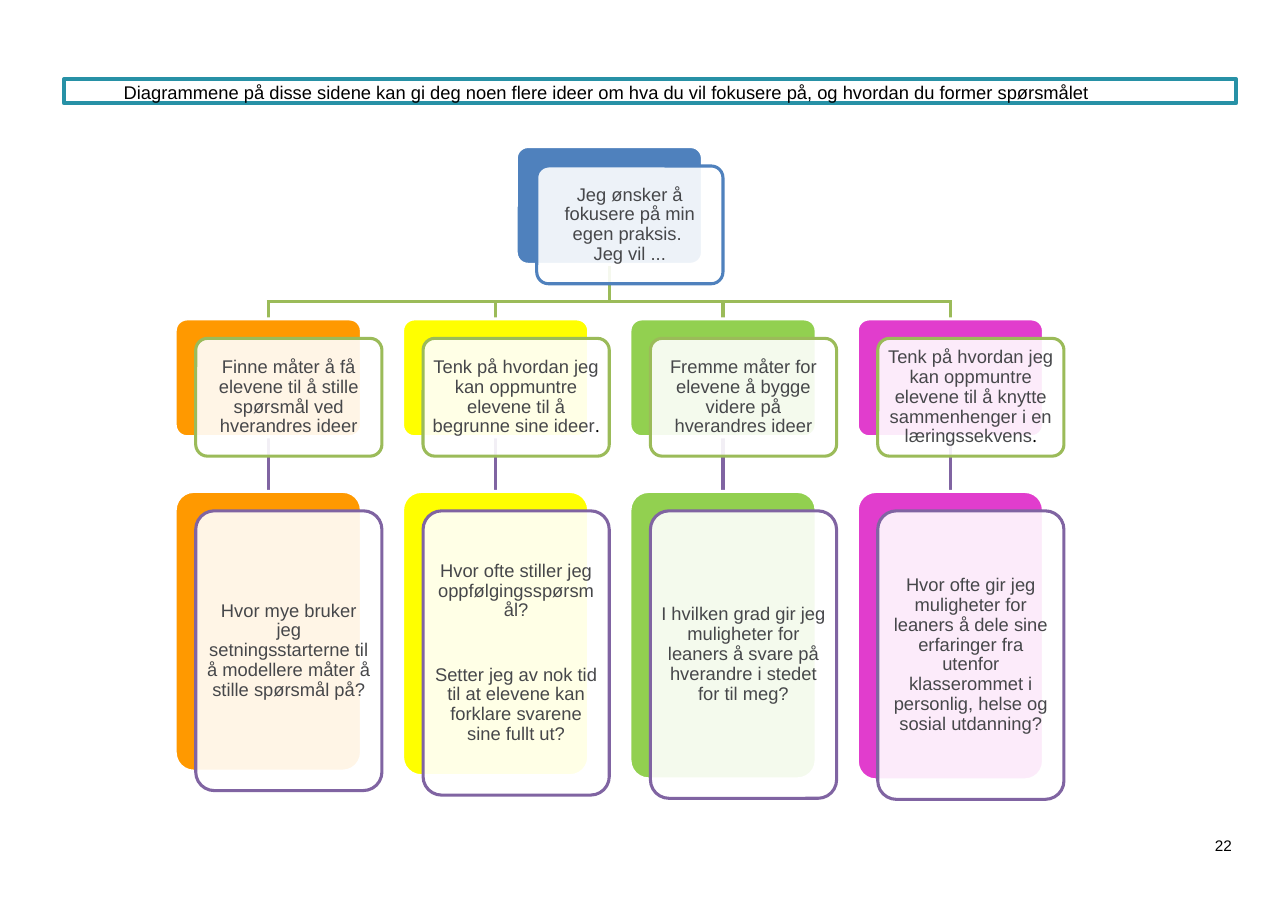
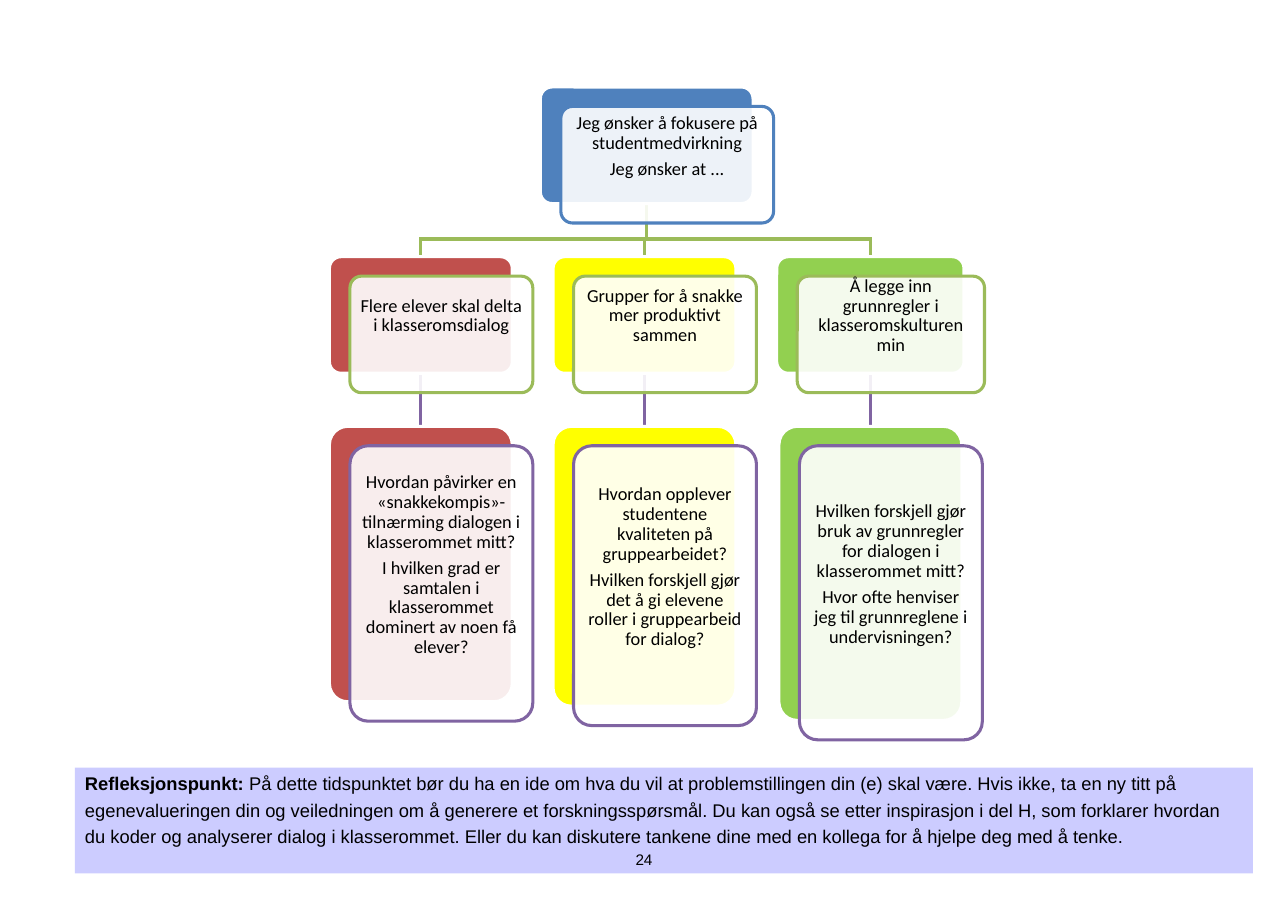
from dataclasses import dataclass

from lxml import etree
from pptx import Presentation
from pptx.dml.color import RGBColor
from pptx.enum.shapes import MSO_CONNECTOR, MSO_SHAPE
from pptx.enum.text import MSO_ANCHOR, MSO_AUTO_SIZE, PP_ALIGN
from pptx.oxml.ns import qn
from pptx.util import Pt

RECT, ROUND = MSO_SHAPE.RECTANGLE, MSO_SHAPE.ROUNDED_RECTANGLE
STRAIGHT = MSO_CONNECTOR.STRAIGHT
TOP, MIDDLE = MSO_ANCHOR.TOP, MSO_ANCHOR.MIDDLE
LEFT, CENTER = PP_ALIGN.LEFT, PP_ALIGN.CENTER
TITLE_ONLY, BLANK = 5, 6


@dataclass(frozen=True)
class Theme:
    sans: str = "Arial"
    humanist: str = "Calibri"
    body: float = 12
    small: float = 10
    line: float = 2
    black: str = "000000"
    grey: str = "46474A"
    white: str = "FFFFFF"
    teal: str = "2791A6"
    lilac: str = "CCCCFF"
    blue: str = "4F81BD"
    olive: str = "9BBB59"
    purple: str = "8064A2"
    orange: str = "FF9900"
    yellow: str = "FFFF00"
    green: str = "92D050"
    magenta: str = "E13DCD"
    red: str = "C0504D"


T = Theme()


@dataclass(frozen=True)
class Box:
    x: float
    y: float
    w: float
    h: float

    def lengths(self):
        return Pt(self.x), Pt(self.y), Pt(self.w), Pt(self.h)

    def shifted(self, dx, dy):
        return Box(self.x + dx, self.y + dy, self.w, self.h)

    @property
    def mid(self):
        return self.x + self.w / 2

    @property
    def bottom(self):
        return self.y + self.h


@dataclass(frozen=True)
class CardStyle:
    font: str
    color: str
    gap: float = 4.2    # space between paragraphs
    lift: float = 0     # extra room under the text


@dataclass(frozen=True)
class Column:
    color: str
    width: float
    branch: list
    leaf: list
    leaf_h: float
    leaf_w: float
    leaf_gap: float = 4.2


# Shared helpers
def rgb(color):
    return RGBColor.from_string(color)


def add_run(p, text, font=T.sans, size=T.body, color=T.black, bold=False):
    r = p.add_run()
    r.text = text
    r.font.name, r.font.size, r.font.bold = font, Pt(size), bold
    r.font.color.rgb = rgb(color)


def frame(sp, margins=(0, 0, 0, 0), anchor=TOP):
    tf = sp.text_frame
    tf.word_wrap, tf.auto_size, tf.vertical_anchor = True, MSO_AUTO_SIZE.NONE, anchor
    (tf.margin_left, tf.margin_top,
     tf.margin_right, tf.margin_bottom) = [Pt(m) for m in margins]
    return tf


def add_box(s, kind, box, fill, line=None, alpha=None):
    sp = s.shapes.add_shape(kind, *box.lengths())
    sp.shadow.inherit = False
    sp.fill.solid()
    sp.fill.fore_color.rgb = rgb(fill)
    if kind == ROUND:
        sp.adjustments[0] = 0.1
    if alpha:
        clr = sp._element.spPr.find(qn("a:solidFill")).find(qn("a:srgbClr"))
        etree.SubElement(clr, qn("a:alpha")).set("val", str(alpha * 1000))
    if line:
        sp.line.color.rgb = rgb(line)
        sp.line.width = Pt(T.line)
    else:
        sp.line.fill.background()
    return sp


def add_line(s, x1, y1, x2, y2, color):
    cx = s.shapes.add_connector(STRAIGHT, Pt(x1), Pt(y1), Pt(x2), Pt(y2))
    cx.line.color.rgb = rgb(color)
    cx.line.width = Pt(T.line)
    etree.SubElement(cx._element.spPr, qn("a:effectLst"))


def page_number(s, box, number):
    sp = s.shapes.add_textbox(*box.lengths())
    p = frame(sp, (2, 0, 0, 0)).paragraphs[0]
    add_run(p, number, size=T.small)


# Banner used as slide title
def banner(s, box, text):
    sp = s.shapes.title
    sp.left, sp.top, sp.width, sp.height = box.lengths()
    sp.line.color.rgb = rgb(T.teal)
    sp.line.width = Pt(2.5)
    p = frame(sp, (39, 1.4, 0, 0)).paragraphs[0]
    p.alignment = LEFT
    add_run(p, text)


# Coloured card with an offset translucent panel that holds the text
def card(s, box, fill, outline, paragraphs, style, gap):
    add_box(s, ROUND, box, fill, T.white)
    panel = add_box(s, ROUND, box.shifted(13.4, 12.7), T.white, outline, alpha=90)
    tf = frame(panel, (3.6, 3.6, 3.6, 3.6 + style.lift), MIDDLE)
    for i, lines in enumerate(paragraphs):
        p = tf.add_paragraph() if i else tf.paragraphs[0]
        p.alignment, p.line_spacing = CENTER, 0.9
        p.space_before = Pt(gap if i else 0)
        for j, line in enumerate(lines.split("\n")):
            if j:
                p.add_line_break()
            # A dot closing a sentence without a question mark is set apart
            stem = line[:-1] if line.endswith(".") and len(lines) > 60 and not j \
                and "\n" not in lines else line
            add_run(p, stem, style.font, color=style.color)
            if stem != line:
                add_run(p, ".", T.humanist)


# Three-tier tree: root, branches, one leaf under each branch
def tree(s, box, card_h, root_w, root_text, columns, style):
    gap_x = (box.w - sum(c.width for c in columns)) / (len(columns) - 1)
    gap_y = (box.h - 2 * card_h - max(c.leaf_h for c in columns)) / 2
    pitch = card_h + gap_y
    root = Box(box.x + (box.w - root_w) / 2, box.y, root_w, card_h)

    branches, leaves, x = [], [], box.x
    for c in columns:
        b = Box(x, box.y + pitch, c.width, card_h)
        branches.append(b)
        leaves.append(Box(b.mid - c.leaf_w / 2, b.y + pitch, c.leaf_w, c.leaf_h))
        x += c.width + gap_x

    # Connecting lines lie behind the cards
    bus_y = branches[0].y - 11.6
    add_line(s, root.mid, root.bottom, root.mid, bus_y, T.olive)
    add_line(s, branches[0].mid - T.line / 2, bus_y,
             branches[-1].mid + T.line / 2, bus_y, T.olive)
    for b, leaf in zip(branches, leaves):
        add_line(s, b.mid, bus_y, b.mid, b.y, T.olive)
        add_line(s, b.mid, b.bottom, b.mid, leaf.y, T.purple)

    card(s, root, T.blue, T.blue, root_text, style, style.gap)
    for c, b, leaf in zip(columns, branches, leaves):
        card(s, b, c.color, T.olive, c.branch, style, style.gap)
        card(s, leaf, c.color, T.purple, c.leaf, style, c.leaf_gap)


# Reflection panel at the foot of the slide
def reflection(s, box, label, text):
    sp = add_box(s, RECT, box, T.lilac)
    p = frame(sp, (6.5, 0, 10, 0)).paragraphs[0]
    p.alignment, p.line_spacing = LEFT, 1.21
    add_run(p, label, bold=True)
    add_run(p, text)


def practice_slide(prs):
    s = prs.slides.add_slide(prs.slide_layouts[TITLE_ONLY])
    banner(s, Box(41.8, 51.8, 766, 15.8),
           "Diagrammene på disse sidene kan gi deg noen flere ideer om hva du vil "
           "fokusere på, og hvordan du former spørsmålet")
    w = 121.7
    columns = [
        Column(T.orange, w,
               ["Finne måter å få elevene til å stille spørsmål ved hverandres ideer"],
               ["Hvor mye bruker jeg setningsstarterne til å modellere måter å stille "
                "spørsmål på?"], 182.9, w),
        Column(T.yellow, w,
               ["Tenk på hvordan jeg kan oppmuntre elevene til å begrunne sine ideer."],
               ["Hvor ofte stiller jeg oppfølgingsspørsmål?",
                "Setter jeg av nok tid til at elevene kan forklare svarene sine fullt ut?"],
               185.8, w, leaf_gap=29),
        Column(T.green, w,
               ["Fremme måter for elevene å bygge videre på hverandres ideer"],
               ["I hvilken grad gir jeg muligheter for leaners å svare på hverandre "
                "i stedet for til meg?"], 187.9, w),
        Column(T.magenta, w,
               ["Tenk på hvordan jeg kan oppmuntre elevene til å knytte sammenhenger "
                "i en læringssekvens."],
               ["Hvor ofte gir jeg muligheter for leaners å dele sine erfaringer fra "
                "utenfor klasserommet i personlig, helse og sosial utdanning?"], 188.6, w),
    ]
    tree(s, Box(114.5, 95.8, 567.4, 414), 77, w,
         ["Jeg ønsker å fokusere på min egen praksis. \nJeg vil ..."],
         columns, CardStyle(T.sans, T.grey))
    page_number(s, Box(792, 546.5, 16.6, 14.4), "22")


def participation_slide(prs):
    s = prs.slides.add_slide(prs.slide_layouts[BLANK])
    reflection(s, Box(49, 501.8, 769.7, 69.1), "Refleksjonspunkt: ",
               "På dette tidspunktet bør du ha en ide om hva du vil at problemstillingen "
               "din (e) skal være. Hvis ikke, ta en ny titt på egenevalueringen din og "
               "veiledningen om å generere et forskningsspørsmål. Du kan også se etter "
               "inspirasjon i del H, som forklarer hvordan du koder og analyserer dialog "
               "i klasserommet. Eller du kan diskutere tankene dine med en kollega for "
               "å hjelpe deg med å tenke.")
    page_number(s, Box(413.3, 555.8, 15.1, 13), "24")
    w = 119.5
    columns = [
        Column(T.red, w, ["Flere elever skal delta i klasseromsdialog"],
               ["Hvordan påvirker en «snakkekompis»-tilnærming dialogen i "
                "klasserommet mitt?",
                "I hvilken grad er samtalen i klasserommet dominert av noen få elever?"],
               180, w),
        Column(T.yellow, w, ["Grupper for å snakke mer produktivt sammen"],
               ["Hvordan opplever studentene kvaliteten på gruppearbeidet?",
                "Hvilken forskjell gjør det å gi elevene roller i gruppearbeid for dialog?"],
               182.9, w),
        Column(T.green, 122.4, ["Å legge inn grunnregler i klasseromskulturen min"],
               ["Hvilken forskjell gjør bruk av grunnregler for dialogen i "
                "klasserommet mitt?",
                "Hvor ofte henviser jeg til grunnreglene i undervisningen?"],
               192.2, w),
    ]
    tree(s, Box(215.3, 56.9, 414.7, 414), 76.2, 139,
         ["Jeg ønsker å fokusere på studentmedvirkning", "Jeg ønsker at ..."],
         columns, CardStyle(T.humanist, T.black, lift=24))


def main():
    prs = Presentation()
    prs.slide_width, prs.slide_height = Pt(841.68), Pt(595.44)
    practice_slide(prs)
    participation_slide(prs)
    prs.save("out.pptx")


if __name__ == "__main__":
    main()
